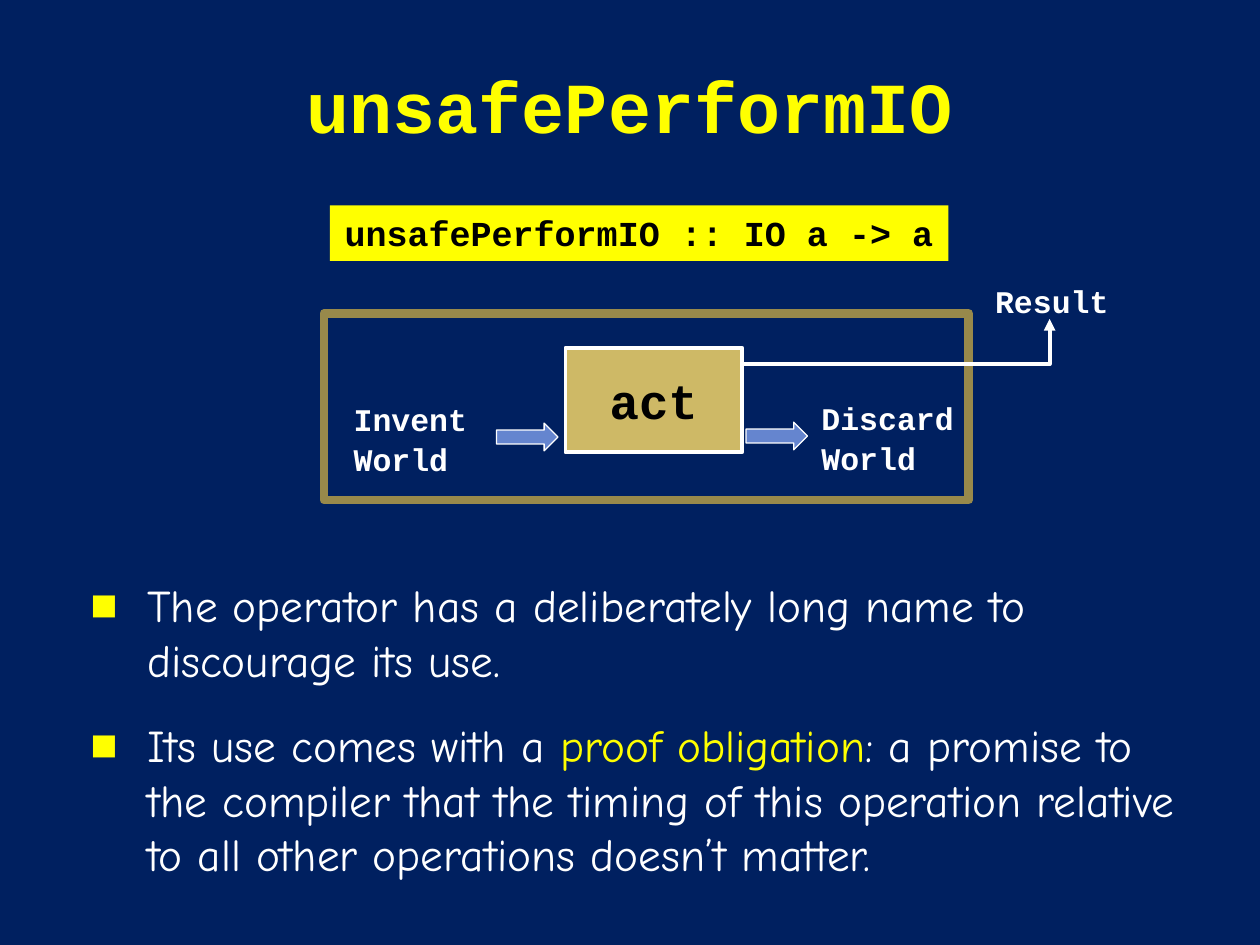
import pptx
import pptx.util
import pptx.dml.color
import pptx.enum.shapes
import pptx.enum.text
import lxml.etree

Cm, Pt = pptx.util.Cm, pptx.util.Pt
Shape = pptx.enum.shapes.MSO_SHAPE
Align = pptx.enum.text.PP_ALIGN
Anchor = pptx.enum.text.MSO_ANCHOR
Fit = pptx.enum.text.MSO_AUTO_SIZE

NAVY, YELLOW, WHITE, BLACK = "002060", "FFFF00", "FFFFFF", "000000"
BRONZE, SAND, BLUE = "98894B", "CEB966", "6585CF"
CODE, HAND = "Courier New", "Comic Neue"

TITLE = "unsafePerformIO"
TYPE = "unsafePerformIO :: IO a -> a"
BULLETS = [
    [("The operator has a deliberately long name to discourage its use.", WHITE)],
    [("Its use comes with a ", WHITE),
     ("proof obligation", YELLOW),
     (": a promise to the compiler that the timing of this operation "
      "relative to all other operations doesn’t matter.", WHITE)],
]

# Boxes are (left, top, width, height) in centimetres.
HEAD = (1.27, 0.76, 22.86, 2.69)
BODY = (1.19, 11.51, 22.86, 6.81)
BANNER = (6.65, 4.14, 12.47, 1.12)
FRAME = (6.53, 6.32, 13, 3.76)
ACT = (11.4, 7.01, 3.56, 2.11)
LABELS = [
    (["Result"], (19.81, 5.51, 2.82, 1.02), False),
    (["Invent", "World"], (6.88, 7.9, 3.07, 1.8), True),
    (["Discard", "World"], (16.31, 7.87, 3.25, 1.8), True),
]
ARROWS = [(10.01, 8.53, 1.24, 0.56), (15.04, 8.51, 1.24, 0.56)]
ROUTE = [(14.99, 7.34), (21.16, 7.34), (21.16, 6.43)]


def rgb(code):
    return pptx.dml.color.RGBColor.from_string(code)


def place(box):
    return [Cm(n) for n in box]


def node(parent, tag, **attrs):
    return lxml.etree.SubElement(parent, pptx.oxml.ns.qn(tag), attrs)


def write(frame, paras, size, font=CODE, color=WHITE, bold=True, align=Align.LEFT,
          anchor=Anchor.TOP, wrap=False, fit=Fit.NONE, before=0, lead=1.0):
    """Fill a text frame; a paragraph is a string or a list of (text, colour)."""
    frame.word_wrap, frame.auto_size = wrap, fit
    frame.vertical_anchor = anchor
    for i, parts in enumerate(paras):
        para = frame.paragraphs[0] if i == 0 else frame.add_paragraph()
        para.alignment = align
        para.space_before, para.line_spacing = Pt(before), lead
        if isinstance(parts, str):
            parts = [(parts, color)]
        for text, shade in parts:
            run = para.add_run()
            run.text = text
            run.font.name, run.font.size, run.font.bold = font, Pt(size), bold
            run.font.color.rgb = rgb(shade)


def style(shape, fill=None, line=None, width=0):
    shape.shadow.inherit = False
    if fill:
        shape.fill.solid()
        shape.fill.fore_color.rgb = rgb(fill)
    else:
        shape.fill.background()
    if line:
        shape.line.color.rgb = rgb(line)
        shape.line.width = Pt(width)
    else:
        shape.line.fill.background()
    return shape


def move(shape, box):
    shape.left, shape.top, shape.width, shape.height = place(box)


def bullet(para):
    props = para._p.get_or_add_pPr()
    props.set("marL", str(Cm(1.52)))
    props.set("indent", str(Cm(-1.14)))
    node(node(props, "a:buClr"), "a:srgbClr", val=YELLOW)
    node(props, "a:buFont", typeface="Arial")
    node(props, "a:buChar", char="■")


def draw(shapes):
    """Add the diagram of the wrapped action."""
    frame = style(shapes.add_shape(Shape.RECTANGLE, *place(FRAME)), None, BRONZE, 5)
    node(frame.line._get_or_add_ln(), "a:round")

    start, *rest = [tuple(place(spot)) for spot in ROUTE]
    pen = shapes.build_freeform(*start)
    pen.add_line_segments(rest, close=False)
    route = style(pen.convert_to_shape(), None, WHITE, 2.25)
    node(route.line._get_or_add_ln(), "a:tailEnd", type="triangle")

    act = style(shapes.add_shape(Shape.RECTANGLE, *place(ACT)), SAND, WHITE, 2.25)
    write(act.text_frame, ["act"], 28, color=BLACK, align=Align.CENTER,
          anchor=Anchor.MIDDLE)
    for box in ARROWS:
        style(shapes.add_shape(Shape.RIGHT_ARROW, *place(box)), BLUE, WHITE, 0.75)
    for lines, box, wrap in LABELS:
        label = shapes.add_textbox(*place(box))
        write(label.text_frame, lines, 18, wrap=wrap, fit=Fit.SHAPE_TO_FIT_TEXT,
              lead=1.06)


def main():
    deck = pptx.Presentation()
    deck.slide_width, deck.slide_height = Cm(25.4), Cm(19.05)
    slide = deck.slides.add_slide(deck.slide_layouts[1])
    slide.background.fill.solid()
    slide.background.fill.fore_color.rgb = rgb(NAVY)

    title, body = slide.placeholders
    move(title, HEAD)
    write(title.text_frame, [TITLE], 41, color=YELLOW, align=Align.CENTER,
          anchor=Anchor.MIDDLE, wrap=True)
    move(body, BODY)
    write(body.text_frame, BULLETS, 25.9, font=HAND, bold=False, wrap=True, before=18)
    for para in body.text_frame.paragraphs:
        bullet(para)

    banner = style(slide.shapes.add_shape(Shape.RECTANGLE, *place(BANNER)), YELLOW)
    write(banner.text_frame, [TYPE], 20, color=BLACK, align=Align.CENTER,
          fit=Fit.SHAPE_TO_FIT_TEXT, before=12)
    draw(slide.shapes.add_group_shape().shapes)
    deck.save("out.pptx")


if __name__ == "__main__":
    main()
